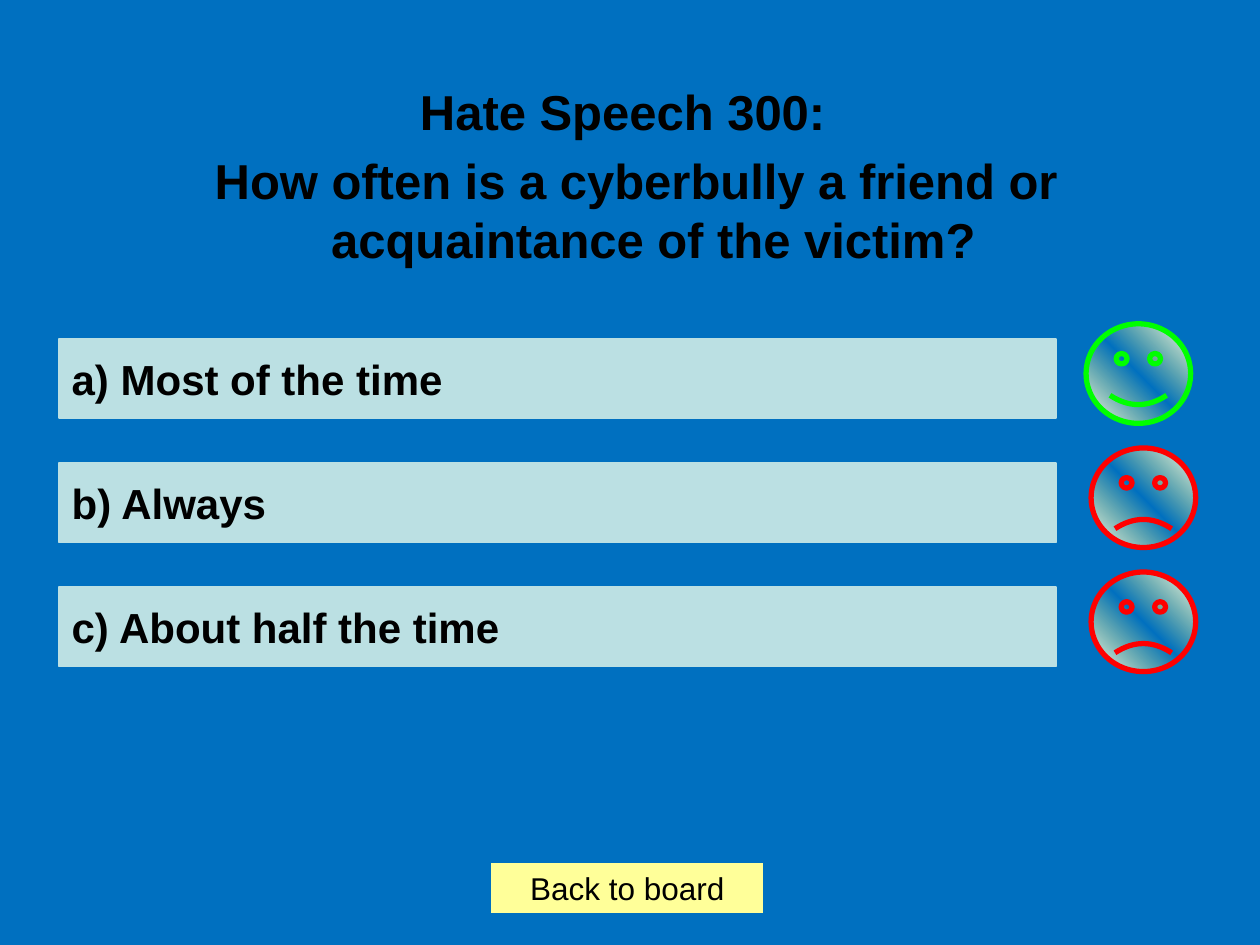
from lxml import etree
from pptx import Presentation
from pptx.dml.color import RGBColor
from pptx.enum import shapes, text
from pptx.oxml import ns
from pptx.util import Inches, Pt

BLUE = RGBColor(0x00, 0x70, 0xC0)
PALE_TEAL = RGBColor(0xBB, 0xE0, 0xE3)
PALE_YELLOW = RGBColor(0xFF, 0xFF, 0x99)
GREEN = RGBColor(0x00, 0xFF, 0x00)
RED = RGBColor(0xFF, 0x00, 0x00)
BLACK = RGBColor(0x00, 0x00, 0x00)

# Position in percent, colour, opacity in percent
FACE_STOPS = [(0, "FFFFFF", 100), (50, "FFFF66", 0), (100, "FFFFFF", 100)]

QUESTION = [
    "Hate Speech 300: ",
    " How often is a cyberbully a friend or acquaintance of the victim?",
]
ANSWERS = [("a) Most of the time", True), ("b) Always", False), ("c) About half the time", False)]
FIRST_ANSWER_TOP = 2.69
ANSWER_PITCH = 0.985


def write(paragraph, words, size, bold=False, align=text.PP_ALIGN.LEFT):
    paragraph.alignment = align
    run = paragraph.add_run()
    run.text = words
    font = run.font
    font.name, font.size, font.bold = "Arial", Pt(size), bold
    font.color.rgb = BLACK


def add_question(slide):
    title = slide.shapes.title
    title.left, title.top = Inches(0.39), Inches(0.6)
    title.width, title.height = Inches(9.21), Inches(0.75)
    frame = title.text_frame
    frame.auto_size = text.MSO_AUTO_SIZE.NONE
    frame.vertical_anchor = text.MSO_ANCHOR.TOP
    frame.word_wrap = True
    for index, words in enumerate(QUESTION):
        paragraph = frame.add_paragraph() if index else frame.paragraphs[0]
        write(paragraph, words, 28, bold=True, align=text.PP_ALIGN.CENTER)
        paragraph.space_before = Pt(5.6)
        properties = paragraph._p.get_or_add_pPr()
        properties.set("marL", str(Inches(0.38)))
        properties.set("indent", str(Inches(-0.38)))


def add_button(slide, left, top, width, height, fill, words, line=None, **text_format):
    button = slide.shapes.add_shape(
        shapes.MSO_SHAPE.ACTION_BUTTON_CUSTOM,
        Inches(left), Inches(top), Inches(width), Inches(height))
    button.shadow.inherit = False
    button.fill.solid()
    button.fill.fore_color.rgb = fill
    if line is None:
        button.line.fill.background()
    else:
        button.line.color.rgb = line
        button.line.width = Pt(1)
    frame = button.text_frame
    frame.word_wrap = False
    frame.vertical_anchor = text.MSO_ANCHOR.MIDDLE
    write(frame.paragraphs[0], words, **text_format)


def set_gradient(shape, stops, angle):
    """Fill with stops of (position, colour, opacity); angle is counter-clockwise."""
    shape.fill.gradient()
    shape.fill.gradient_angle = angle
    stop_list = shape._element.spPr.find(ns.qn("a:gradFill")).find(ns.qn("a:gsLst"))
    for old_stop in list(stop_list):
        stop_list.remove(old_stop)
    for position, color, opacity in stops:
        stop = etree.SubElement(stop_list, ns.qn("a:gs"), pos=str(position * 1000))
        rgb = etree.SubElement(stop, ns.qn("a:srgbClr"), val=color)
        etree.SubElement(rgb, ns.qn("a:alpha"), val=str(opacity * 1000))


def add_face(slide, top, correct):
    left = 8.62 if correct else 8.66
    face = slide.shapes.add_shape(
        shapes.MSO_SHAPE.SMILEY_FACE,
        Inches(left), Inches(top), Inches(0.83), Inches(0.79))
    face.shadow.inherit = False
    face.adjustments[0] = 0.047 if correct else -0.047
    set_gradient(face, FACE_STOPS, 45)
    face.line.color.rgb = GREEN if correct else RED
    face.line.width = Pt(3)


def main():
    prs = Presentation()
    prs.slide_width, prs.slide_height = Inches(10), Inches(7.5)
    slide = prs.slides.add_slide(prs.slide_layouts[5])
    slide.background.fill.solid()
    slide.background.fill.fore_color.rgb = BLUE

    add_question(slide)
    for row, (answer, correct) in enumerate(ANSWERS):
        top = FIRST_ANSWER_TOP + row * ANSWER_PITCH
        add_button(slide, 0.47, top, 7.91, 0.63, PALE_TEAL, answer,
                   line=PALE_TEAL, size=24, bold=True)
        add_face(slide, top - 0.12, correct)
    add_button(slide, 3.9, 6.85, 2.16, 0.4, PALE_YELLOW, "Back to board",
               size=18, align=text.PP_ALIGN.CENTER)

    prs.save("out.pptx")


if __name__ == "__main__":
    main()
